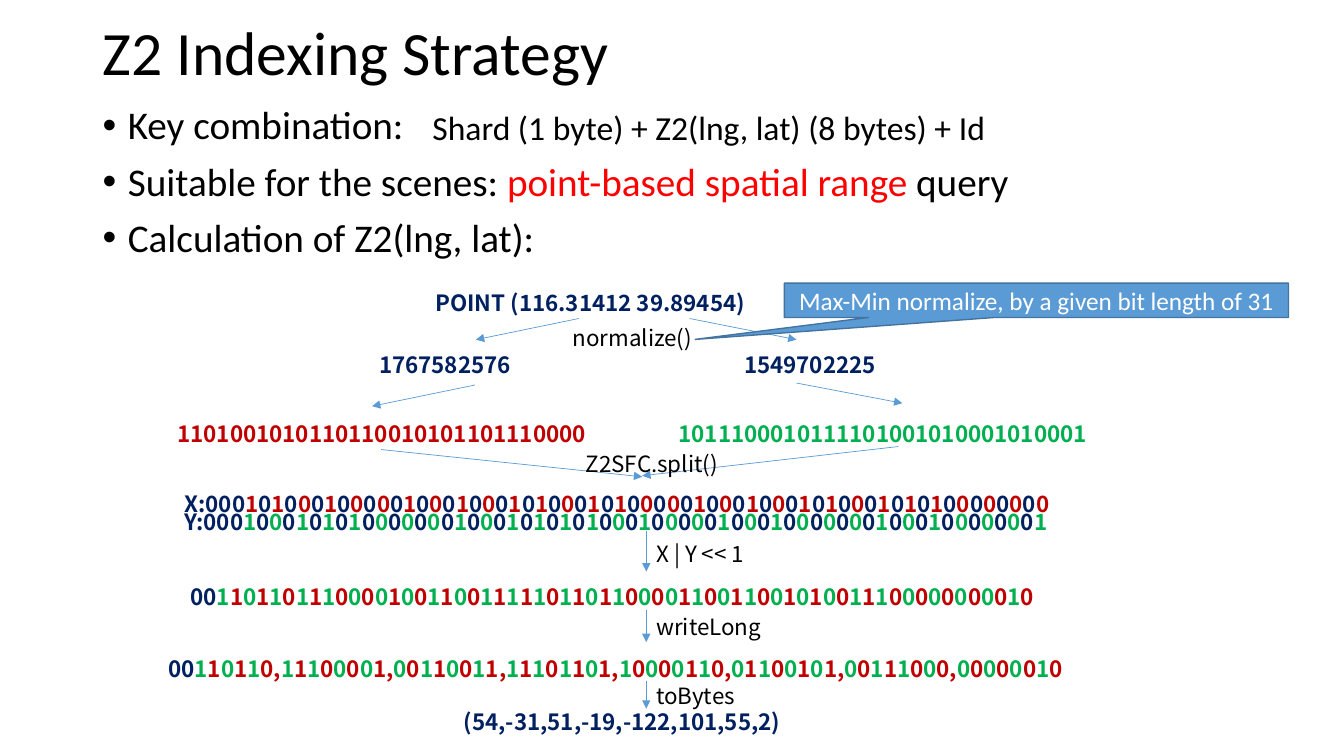
from itertools import cycle

from lxml import etree
from pptx import Presentation
from pptx.dml.color import RGBColor
from pptx.enum.shapes import MSO_CONNECTOR, MSO_SHAPE
from pptx.enum.text import MSO_ANCHOR, MSO_AUTO_SIZE, PP_ALIGN
from pptx.oxml.ns import qn
from pptx.util import Inches, Pt

STRAIGHT = MSO_CONNECTOR.STRAIGHT
CALLOUT = MSO_SHAPE.RECTANGULAR_CALLOUT
MIDDLE = MSO_ANCHOR.MIDDLE
CENTER = PP_ALIGN.CENTER
GROW = MSO_AUTO_SIZE.SHAPE_TO_FIT_TEXT

BLACK = RGBColor(0x00, 0x00, 0x00)
WHITE = RGBColor(0xFF, 0xFF, 0xFF)
HIGHLIGHT = RGBColor(0xFF, 0x00, 0x00)
NAVY = RGBColor(0x00, 0x20, 0x60)
RED = RGBColor(0xC0, 0x00, 0x00)
GREEN = RGBColor(0x00, 0xB0, 0x50)
BLUE = RGBColor(0x5B, 0x9B, 0xD5)
DARK_BLUE = RGBColor(0x43, 0x73, 0x9E)

TEXT_FONT = "Calibri"
DIAGRAM_FONT = "Noto Sans CJK SC"

LONGITUDE_BITS = "1101001010110110010101101110000"
LATITUDE_BITS = "1011100010111101001010001010001"
Z2_BYTES = ("00110110,11100001,00110011,11101101,"
            "10000110,01100101,00111000,00000010")


def add_run(paragraph, text, size, color, font=TEXT_FONT, bold=False):
    run = paragraph.add_run()
    run.text = text
    run.font.size = Pt(size)
    run.font.name = font
    run.font.bold = bold
    run.font.color.rgb = color
    properties = run.font.fill._xPr
    east_asian = etree.SubElement(properties, qn("a:ea"))
    east_asian.set("typeface", font)


def add_frame(shapes, left, top, width, height):
    box = shapes.add_textbox(Inches(left), Inches(top), Inches(width), Inches(height))
    box.text_frame.word_wrap = True
    return box.text_frame


def add_label(shapes, left, top, width, runs, bold=True):
    """Diagram text without margins; runs are (text, color) pairs."""
    frame = add_frame(shapes, left, top, width, 0.2)
    frame.margin_left = frame.margin_right = frame.margin_top = frame.margin_bottom = 0
    frame.auto_size = GROW
    for text, color in runs:
        add_run(frame.paragraphs[0], text, 16, color, DIAGRAM_FONT, bold)


def add_arrow(shapes, start_x, start_y, end_x, end_y):
    arrow = shapes.add_connector(STRAIGHT, Inches(start_x), Inches(start_y),
                                 Inches(end_x), Inches(end_y))
    arrow.line.color.rgb = BLUE
    arrow.line.width = Pt(0.5)
    etree.SubElement(arrow.line._get_or_add_ln(), qn("a:tailEnd")).set("type", "triangle")
    etree.SubElement(arrow._element.spPr, qn("a:effectLst"))


def spread_runs(name, bits, color):
    """Put a navy zero between each two bits."""
    runs = [(name + ":000", NAVY)]
    for bit in bits:
        runs += [(bit, color), ("0", NAVY)]
    return runs[:-1]


def interleaved_runs(byte_groups):
    """Color bits green and red in turn; a comma joins the bit before it."""
    runs = [("00", NAVY)]
    colors = cycle((GREEN, RED))
    for character in byte_groups[2:]:
        if character == ",":
            text, color = runs.pop()
            runs.append((text + ",", color))
        else:
            runs.append((character, next(colors)))
    return runs


def add_title(slide, left, top, width, height):
    frame = add_frame(slide.shapes, left, top, width, height)
    frame.vertical_anchor = MIDDLE
    frame.paragraphs[0].line_spacing = 0.9
    add_run(frame.paragraphs[0], "Z2 Indexing Strategy", 44, BLACK)


def add_bullets(slide, left, top, width, height):
    bullets = [
        [("Key combination:", BLACK)],
        [("Suitable for the scenes: ", BLACK),
         ("point-based spatial range ", HIGHLIGHT), ("query", BLACK)],
        [("Calculation of Z2(lng, lat):", BLACK)],
    ]
    frame = add_frame(slide.shapes, left, top, width, height)
    for index, runs in enumerate(bullets):
        paragraph = frame.add_paragraph() if index else frame.paragraphs[0]
        paragraph.line_spacing = 0.9
        paragraph.space_before = Pt(10)
        properties = paragraph._p.get_or_add_pPr()
        properties.set("marL", str(Inches(0.25)))
        properties.set("indent", str(Inches(-0.25)))
        etree.SubElement(properties, qn("a:buFont")).set("typeface", "Arial")
        etree.SubElement(properties, qn("a:buChar")).set("char", "•")
        for text, color in runs:
            add_run(paragraph, text, 28, color)

    # Key layout beside the first bullet
    key_frame = add_frame(slide.shapes, left + 3.27, top + 0.01, 5.73, 0.5)
    key_frame.word_wrap = False
    key_frame.auto_size = GROW
    add_run(key_frame.paragraphs[0], "Shard (1 byte) + Z2(lng, lat) (8 bytes) + Id", 24, BLACK)


def add_callout(slide, left, top, width, height):
    callout = slide.shapes.add_shape(CALLOUT, Inches(left), Inches(top),
                                     Inches(width), Inches(height))
    callout.adjustments[0] = -0.677
    callout.adjustments[1] = 1.139
    callout.shadow.inherit = False
    callout.fill.solid()
    callout.fill.fore_color.rgb = BLUE
    callout.line.color.rgb = DARK_BLUE
    callout.line.width = Pt(1)
    frame = callout.text_frame
    frame.word_wrap = True
    frame.vertical_anchor = MIDDLE
    frame.paragraphs[0].alignment = CENTER
    add_run(frame.paragraphs[0], "Max-Min normalize, by a given bit length of 31", 18, WHITE)


def add_normalization(slide, left, top):
    shapes = slide.shapes
    # The point, its two integers and their bits
    for x, y, width, text, color in [
        (2.56, 0, 3.47, "POINT (116.31412 39.89454)", NAVY),
        (2, 0.61, 1.42, "1767582576", NAVY),
        (5.62, 0.61, 1.42, "1549702225", NAVY),
        (0, 1.3, 4.33, LONGITUDE_BITS, RED),
        (4.97, 1.3, 4.33, LATITUDE_BITS, GREEN),
    ]:
        add_label(shapes, left + x, top + y, width, [(text, color)])

    # Arrows that fan out and meet again
    for start_x, start_y, end_x, end_y in [
        (3.98, 0.29, 2.96, 0.5), (5.08, 0.29, 6.14, 0.5),
        (2.95, 0.95, 1.93, 1.16), (6.14, 0.93, 7.19, 1.13),
        (2.02, 1.59, 4.61, 1.86), (7.15, 1.56, 4.61, 1.85),
    ]:
        add_arrow(shapes, left + start_x, top + start_y, left + end_x, top + end_y)

    # Function names and the explanation
    add_callout(slide, left + 6.02, top - 0.06, 5, 0.34)
    for x, y, text in [(3.92, 0.35, "normalize()"), (4.05, 1.6, "Z2SFC.split()")]:
        add_label(shapes, left + x, top + y, 1.38, [(text, BLACK)], bold=False)


def add_interleaving(slide, left, top):
    shapes = slide.shapes
    # Spread bits of both coordinates
    pair = shapes.add_group_shape().shapes
    add_label(pair, left + 0.16, top, 9.16, spread_runs("X", LONGITUDE_BITS, RED))
    add_label(pair, left + 0.16, top + 0.18, 9.16, spread_runs("Y", LATITUDE_BITS, GREEN))

    # Combined value, bytes and result
    z2_bits = Z2_BYTES.replace(",", "")
    add_label(shapes, left + 0.22, top + 0.93, 8.95, interleaved_runs(z2_bits))
    add_label(shapes, left, top + 1.64, 9.4, interleaved_runs(Z2_BYTES))
    add_label(shapes, left + 2.93, top + 2.17, 3.37, [("(54,-31,51,-19,-122,101,55,2)", NAVY)])

    # Steps between the rows
    for start, end, label_top, text in [
        (0.41, 0.81, 0.5, "X | Y << 1"),
        (1.19, 1.51, 1.22, "writeLong"),
        (1.9, 2.17, 1.91, "toBytes"),
    ]:
        add_arrow(shapes, left + 4.74, top + start, left + 4.74, top + end)
        add_label(shapes, left + 4.84, top + label_top, 1.38, [(text, BLACK)], bold=False)


def main():
    presentation = Presentation()
    presentation.slide_width = Inches(13.33)
    presentation.slide_height = Inches(7.5)
    slide = presentation.slides.add_slide(presentation.slide_layouts[6])
    add_title(slide, 0.92, 0.1, 11.5, 0.9)
    add_bullets(slide, 0.92, 1, 11.5, 5.75)
    add_normalization(slide, 1.76, 2.87)
    add_interleaving(slide, 1.67, 4.86)
    presentation.save("out.pptx")


if __name__ == "__main__":
    main()
